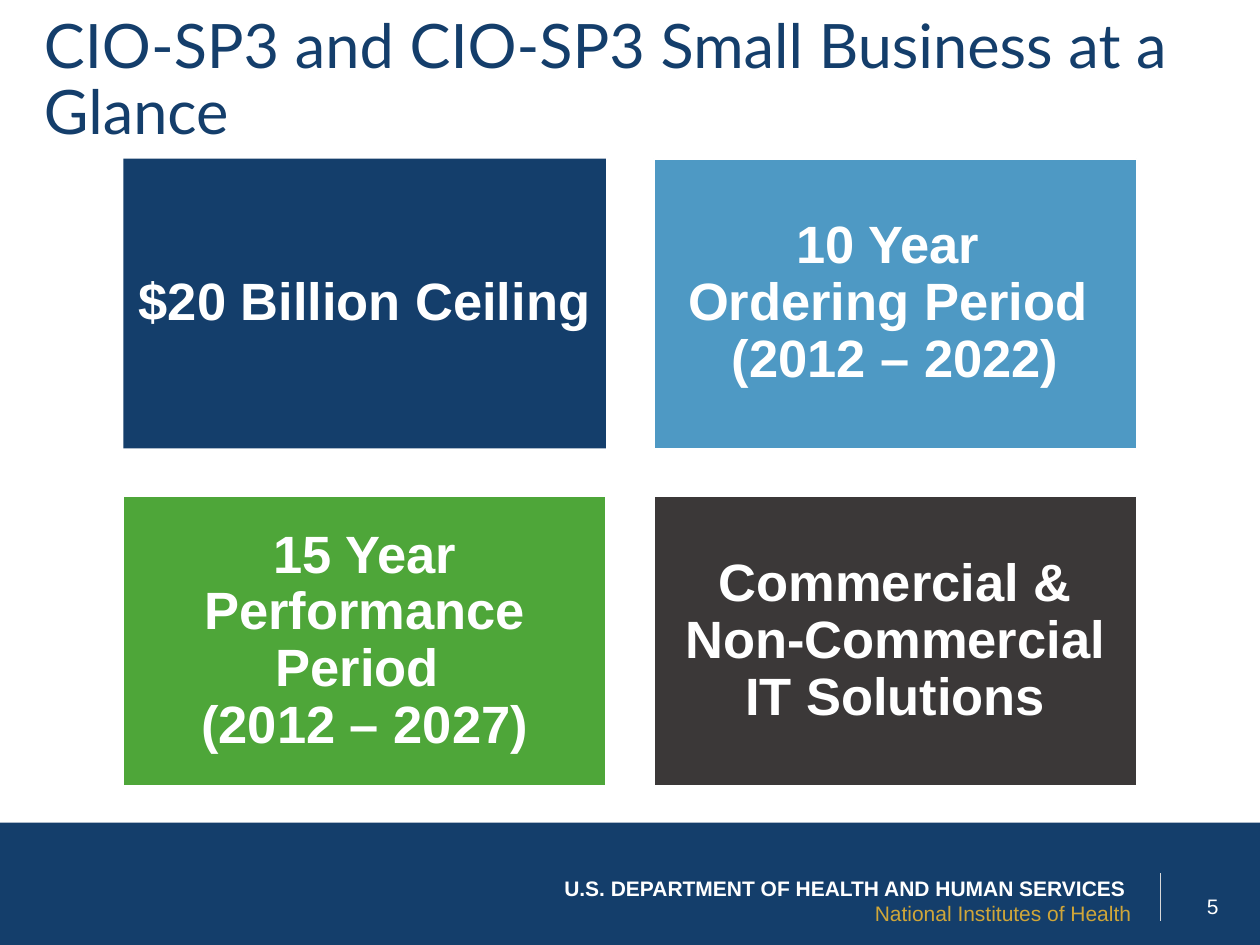
from pptx import Presentation
from pptx.dml.color import RGBColor
from pptx.enum.shapes import MSO_CONNECTOR, MSO_SHAPE
from pptx.enum.text import MSO_ANCHOR, PP_ALIGN
from pptx.oxml.ns import qn
from pptx.util import Inches, Pt
from lxml import etree

NAVY, WHITE, GOLD = "143E6B", "FFFFFF", "CFA639"


def color(hex_value):
    return RGBColor.from_string(hex_value)


def write(frame, paragraphs, size, font, align, spacing=1.0):
    """Fill a frame with (text, colour, bold) paragraphs; newlines become line breaks."""
    frame.word_wrap = True
    frame.vertical_anchor = MSO_ANCHOR.MIDDLE
    for i, (text, hex_value, bold) in enumerate(paragraphs):
        paragraph = frame.add_paragraph() if i else frame.paragraphs[0]
        paragraph.alignment = align
        paragraph.line_spacing = spacing
        for j, line in enumerate(text.split("\n")):
            if j:
                paragraph.add_line_break()
            run = paragraph.add_run()
            run.text = line
            run.font.size = Pt(size)
            run.font.name = font
            run.font.bold = bold
            run.font.color.rgb = color(hex_value)


prs = Presentation()
prs.slide_width, prs.slide_height = Inches(10), Inches(7.5)
slide = prs.slides.add_slide(prs.slide_layouts[6])
shapes = slide.shapes

# Footer band and divider
band = shapes.add_shape(MSO_SHAPE.RECTANGLE, 0, Inches(6.53), Inches(10), Inches(0.97))
band.shadow.inherit = False
band.fill.solid()
band.fill.fore_color.rgb = color(NAVY)
band.line.fill.background()

divider = shapes.add_connector(
    MSO_CONNECTOR.STRAIGHT, Inches(9.21), Inches(6.93), Inches(9.21), Inches(7.31))
divider.line.color.rgb = color("D9D9D9")
divider.line.width = Pt(0.5)
etree.SubElement(divider.element.spPr, qn("a:effectLst"))

# Title, page number and agency name
title = shapes.add_textbox(Inches(0.25), Inches(0.25), Inches(9.52), Inches(0.8))
write(title.text_frame, [("CIO-SP3 and CIO-SP3 Small Business at a Glance", NAVY, False)],
      35, "Lato", PP_ALIGN.LEFT, 0.9)

page_number = shapes.add_textbox(Inches(9.31), Inches(6.99), Inches(0.46), Inches(0.4))
write(page_number.text_frame, [("5", WHITE, False)], 12, "Arial", PP_ALIGN.RIGHT)

agency = shapes.add_textbox(Inches(3.31), Inches(6.95), Inches(5.77), Inches(0.4))
write(agency.text_frame,
      [("U.S. DEPARTMENT OF HEALTH AND HUMAN SERVICES ", WHITE, True),
       ("National Institutes of Health", GOLD, False)],
      12, "Arial", PP_ALIGN.RIGHT)

# Two-by-two grid of contract facts
facts = [
    ("$20 Billion Ceiling", NAVY),
    ("10 Year \nOrdering Period \n(2012 – 2022)", "4E99C4"),
    ("15 Year Performance Period \n(2012 – 2027)", "4EA639"),
    ("Commercial & Non-Commercial IT Solutions", "3B3838"),
]
for i, (fact, fill) in enumerate(facts):
    row, column = divmod(i, 2)
    tile = shapes.add_shape(
        MSO_SHAPE.RECTANGLE, Inches(0.98 + 4.21 * column), Inches(1.26 + 2.68 * row),
        Inches(3.83), Inches(2.3))
    tile.shadow.inherit = False
    tile.fill.solid()
    tile.fill.fore_color.rgb = color(fill)
    if i == 0:
        tile.line.fill.background()
    else:
        tile.line.color.rgb = color(WHITE)
        tile.line.width = Pt(1)
    frame = tile.text_frame
    frame.margin_left = frame.margin_right = Inches(0.12)
    frame.margin_top = frame.margin_bottom = Inches(0.12)
    write(frame, [(fact, WHITE, True)], 30, "Arial", PP_ALIGN.CENTER, 0.9)

prs.save("out.pptx")
